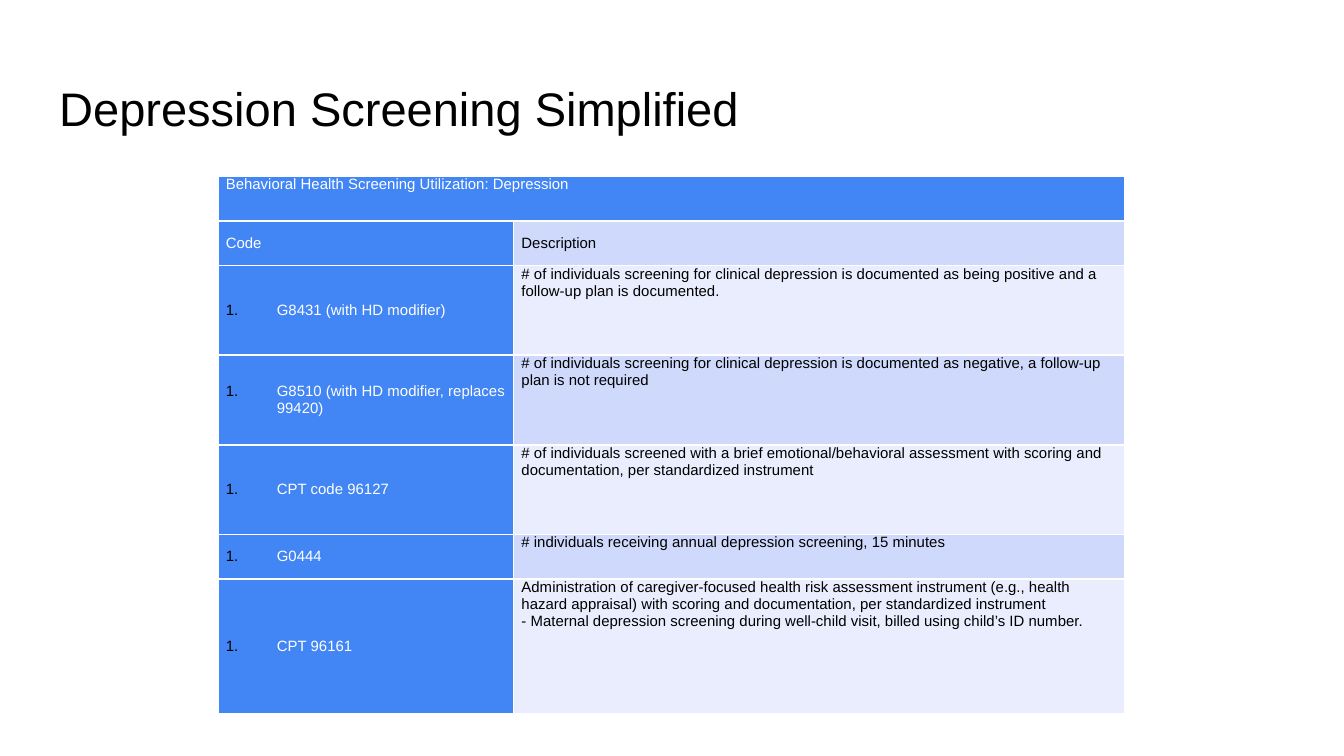
from lxml.etree import SubElement
from pptx import Presentation
from pptx.dml.color import RGBColor
from pptx.enum.text import MSO_ANCHOR, PP_ALIGN
from pptx.oxml.ns import qn
from pptx.util import Inches, Pt

COLORS = {
    "ink": "000000",
    "paper": "FFFFFF",
    "accent": "4285F4",
    "band": "CFD9FB",
    "light_band": "E9EDFD",
}
FONT = "Arial"
HEADING = "Behavioral Health Screening Utilization: Depression"
COLUMN_LABELS = ("Code", "Description")
# code, description paragraphs, row height in units
SCREENINGS = [
    ("G8431 (with HD modifier)",
     ["# of individuals screening for clinical depression is documented as being "
      "positive and a follow-up plan is documented."], 2),
    ("G8510 (with HD modifier, replaces 99420)",
     ["# of individuals screening for clinical depression is documented as negative, "
      "a follow-up plan is not required"], 2),
    ("CPT code 96127",
     ["# of individuals screened with a brief emotional/behavioral assessment with "
      "scoring and documentation, per standardized instrument"], 2),
    ("G0444",
     ["# individuals receiving annual depression screening, 15 minutes"], 1),
    ("CPT 96161",
     ["Administration of caregiver-focused health risk assessment instrument (e.g., "
      "health hazard appraisal) with scoring and documentation, per standardized instrument",
      "- Maternal depression screening during well-child visit, billed using child’s ID "
      "number."], 3),
]


def set_attributes(target, values):
    for name, value in values.items():
        setattr(target, name, value)


def format_font(font, size, color):
    set_attributes(font, {"name": FONT, "size": Pt(size), "bold": False})
    font.color.rgb = RGBColor.from_string(COLORS[color])


def number_paragraph(paragraph):
    """Start a hanging numbered list at 1."""
    properties = paragraph._p.get_or_add_pPr()
    properties.set("marL", str(Inches(0.38)))
    properties.set("indent", str(Inches(-0.38)))
    bullet_color = SubElement(properties, qn("a:buClr"))
    SubElement(bullet_color, qn("a:srgbClr"), val=COLORS["ink"])
    SubElement(properties, qn("a:buFont"), typeface=FONT)
    SubElement(properties, qn("a:buAutoNum"), type="arabicPeriod")


def fill_cell(cell, lines, fill, color="ink", anchor=MSO_ANCHOR.TOP, numbered=False):
    set_attributes(cell, {
        "text": "\n".join(lines),
        "vertical_anchor": anchor,
        "margin_left": Inches(0.06),
        "margin_right": Inches(0.06),
        "margin_top": 0,
        "margin_bottom": 0,
    })
    cell.fill.solid()
    cell.fill.fore_color.rgb = RGBColor.from_string(COLORS[fill])
    for paragraph in cell.text_frame.paragraphs:
        for run in paragraph.runs:
            format_font(run.font, 8, color)
        if numbered:
            number_paragraph(paragraph)


def place_title(slide, left, top, width, height):
    title = slide.shapes.title
    set_attributes(title, {
        "left": Inches(left), "top": Inches(top),
        "width": Inches(width), "height": Inches(height),
    })
    frame = title.text_frame
    frame.text = "Depression Screening Simplified"
    margins = {f"margin_{side}": Inches(0.1) for side in ("left", "right", "top", "bottom")}
    set_attributes(frame, {"word_wrap": True, "vertical_anchor": MSO_ANCHOR.TOP, **margins})
    heading = frame.paragraphs[0]
    heading.alignment = PP_ALIGN.LEFT
    format_font(heading.runs[0].font, 25.2, "ink")


def add_screening_table(slide, left, top, width, height):
    """Add the code table; its white rules come from the default table style."""
    row_units = [1, 1] + [units for _, _, units in SCREENINGS]
    table = slide.shapes.add_table(
        len(row_units), 2, Inches(left), Inches(top), Inches(width), Inches(height)).table
    code_width = 2.2
    for column, column_width in zip(table.columns, (code_width, width - code_width)):
        column.width = Inches(column_width)
    for row, units in zip(table.rows, row_units):
        row.height = Inches(height * units / sum(row_units))

    table.cell(0, 0).merge(table.cell(0, 1))
    fill_cell(table.cell(0, 0), [HEADING], "accent", "paper")

    code_label, description_label = COLUMN_LABELS
    fill_cell(table.cell(1, 0), [code_label], "accent", "paper", MSO_ANCHOR.MIDDLE)
    fill_cell(table.cell(1, 1), [description_label], "band", anchor=MSO_ANCHOR.MIDDLE)
    for index, (code, description, _) in enumerate(SCREENINGS, start=2):
        fill_cell(table.cell(index, 0), [code], "accent", "paper",
                  MSO_ANCHOR.MIDDLE, numbered=True)
        fill_cell(table.cell(index, 1), description, "band" if index % 2 else "light_band")


def main():
    deck = Presentation()
    slide_width = Inches(10)
    set_attributes(deck, {"slide_width": slide_width, "slide_height": slide_width * 9 // 16})
    slide = deck.slides.add_slide(deck.slide_layouts[5])
    place_title(slide, 0.34, 0.49, 9.32, 0.63)
    add_screening_table(slide, 1.62, 1.31, 6.75, 4)
    deck.save("out.pptx")


if __name__ == "__main__":
    main()
